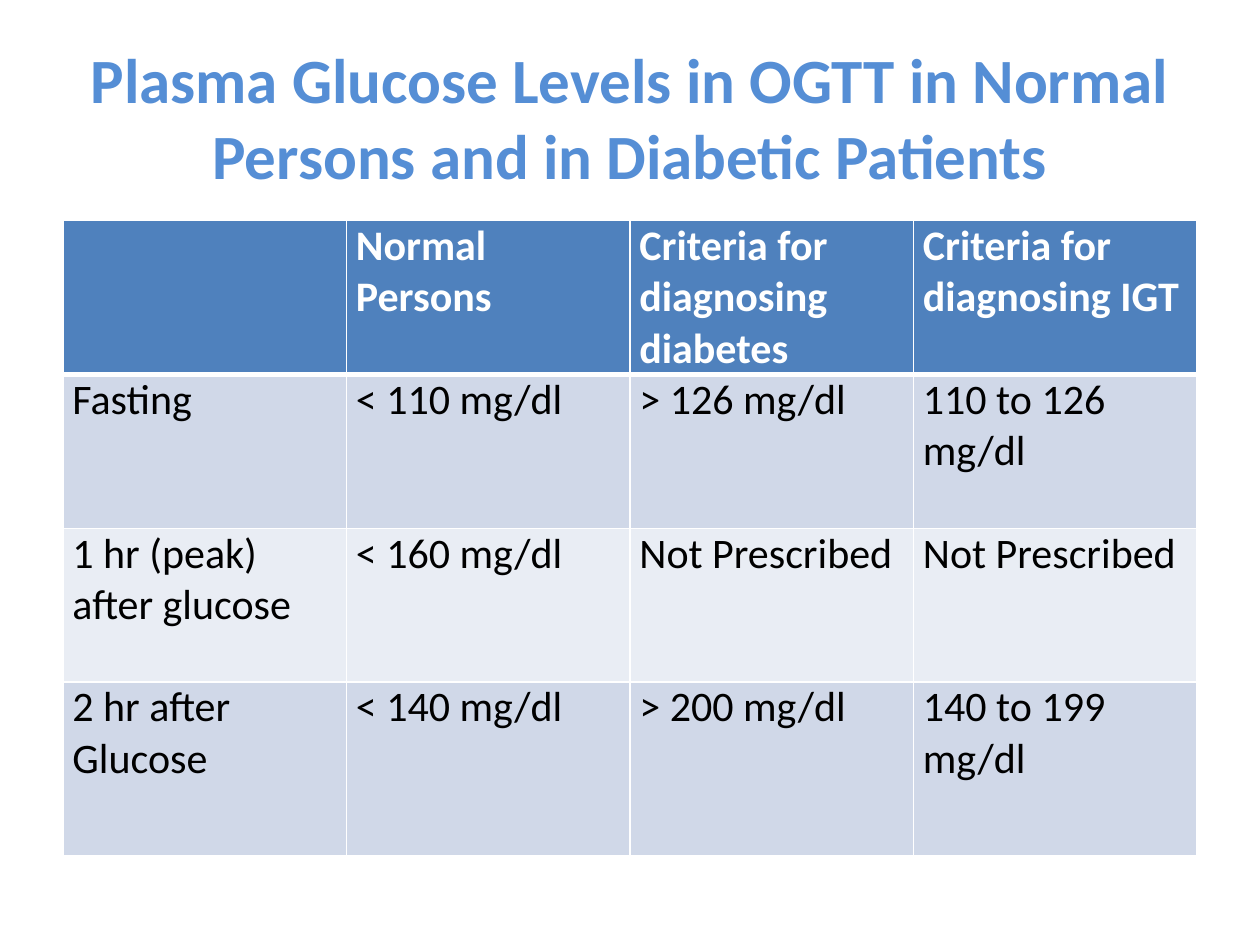
import pptx
import pptx.util
import pptx.dml.color
import pptx.enum.text
import lxml.etree
from pptx.oxml.ns import qn

Cm, Pt = pptx.util.Cm, pptx.util.Pt

TITLE = "Plasma Glucose Levels in OGTT in Normal Persons and in Diabetic Patients"
ROWS = [
    ["", "Normal Persons", "Criteria for diagnosing diabetes", "Criteria for diagnosing IGT"],
    ["Fasting", "< 110 mg/dl", "> 126 mg/dl", "110 to 126 mg/dl"],
    ["1 hr (peak) after glucose", "< 160 mg/dl", "Not Prescribed", "Not Prescribed"],
    ["2 hr after Glucose", "< 140 mg/dl", "> 200 mg/dl", "140 to 199 mg/dl"],
]
HEIGHTS = [3.1, 3.1, 3.1, 3.5]
HEAD, BANDS, WHITE = "4F81BD", ["E9EDF4", "D0D8E8"], "FFFFFF"
LEFT, WIDTH = 1.27, 22.86


def color(code):
    return pptx.dml.color.RGBColor.from_string(code)


def write(frame, text, size, code, bold):
    run = frame.paragraphs[0].add_run()
    run.text = text
    run.font.name = "Calibri"
    run.font.size = Pt(size)
    run.font.bold = bold
    run.font.color.rgb = color(code)


def border(cell, side, width):
    line = lxml.etree.SubElement(cell._tc.get_or_add_tcPr(), qn("a:ln" + side), w=str(Pt(width)))
    fill = lxml.etree.SubElement(line, qn("a:solidFill"))
    lxml.etree.SubElement(fill, qn("a:srgbClr"), val=WHITE)


def add_title(slide):
    box = slide.shapes.add_textbox(Cm(LEFT), Cm(0.76), Cm(WIDTH), Cm(3.18))
    frame = box.text_frame
    frame.word_wrap = True
    frame.vertical_anchor = pptx.enum.text.MSO_ANCHOR.MIDDLE
    frame.paragraphs[0].alignment = pptx.enum.text.PP_ALIGN.CENTER
    write(frame, TITLE, 36, "558ED5", True)


def add_levels(slide):
    count = len(ROWS[0])
    table = slide.shapes.add_table(
        len(ROWS), count, Cm(LEFT), Cm(4.45), Cm(WIDTH), Cm(sum(HEIGHTS))
    ).table
    for col in table.columns:
        col.width = Cm(WIDTH / count)
    for r, row in enumerate(ROWS):
        table.rows[r].height = Cm(HEIGHTS[r])
        head = r == 0
        for c, text in enumerate(row):
            cell = table.cell(r, c)
            cell.margin_left = cell.margin_right = Cm(0.19)
            cell.margin_top = cell.margin_bottom = 0
            for side in "LRTB":
                thick = (r, side) in [(0, "B"), (1, "T")]
                border(cell, side, 3 if thick else 1)
            cell.fill.solid()
            cell.fill.fore_color.rgb = color(HEAD if head else BANDS[r % 2])
            if text:
                write(cell.text_frame, text, 24, WHITE if head else "000000", head)


def main():
    deck = pptx.Presentation()
    deck.slide_width, deck.slide_height = Cm(25.4), Cm(19.05)
    slide = deck.slides.add_slide(deck.slide_layouts[6])
    add_title(slide)
    add_levels(slide)
    deck.save("out.pptx")


if __name__ == "__main__":
    main()
